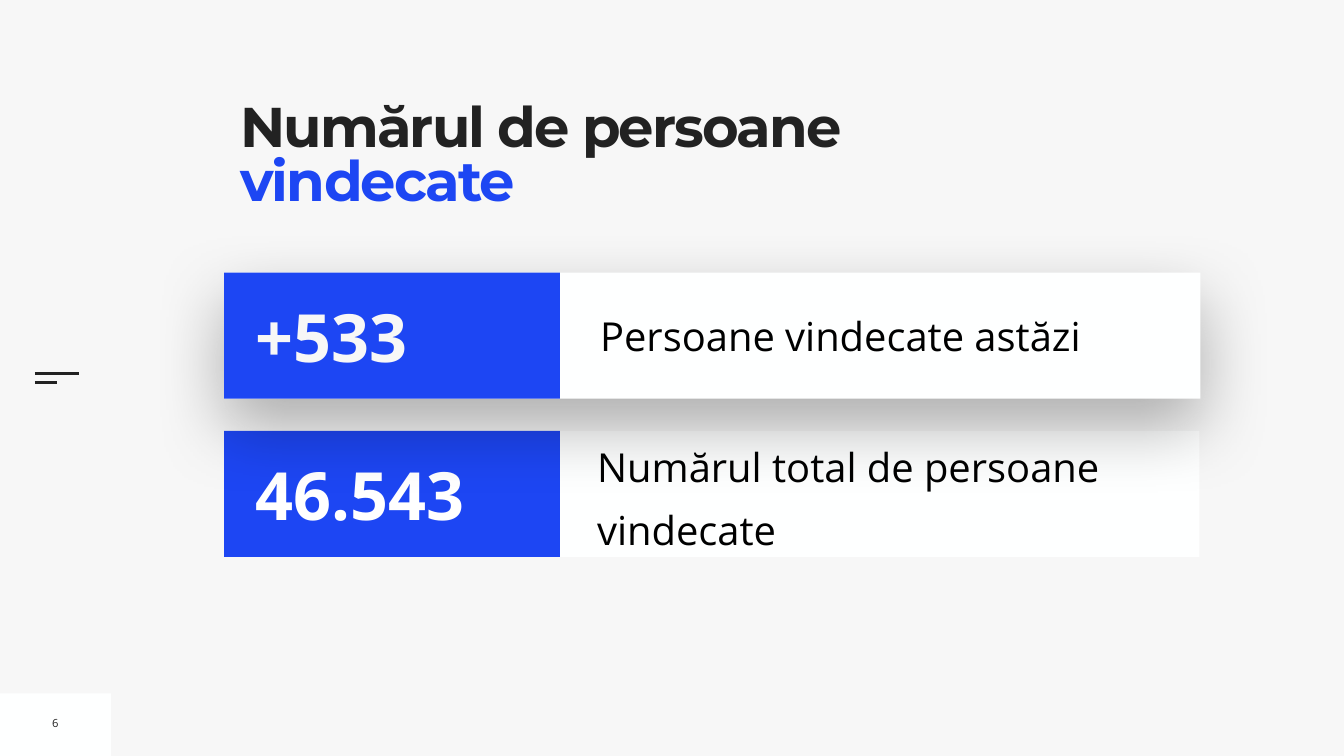
from lxml import etree
from pptx import Presentation
from pptx.dml.color import RGBColor
from pptx.enum.shapes import MSO_CONNECTOR, MSO_SHAPE
from pptx.enum.text import MSO_ANCHOR, PP_ALIGN
from pptx.oxml import parse_xml
from pptx.oxml.ns import nsdecls, qn
from pptx.util import Pt

PX = 9144  # 100 px to the inch
RECT, LINE = MSO_SHAPE.RECTANGLE, MSO_CONNECTOR.STRAIGHT
MIDDLE, TOP = MSO_ANCHOR.MIDDLE, MSO_ANCHOR.TOP
CENTER, LEFT = PP_ALIGN.CENTER, PP_ALIGN.LEFT
WHITE, PALE, BLUE, DARK, BLACK = "FEFFFF", "F7F7F7", "1D46F3", "222222", "000000"
HEAD, BODY = "Montserrat", "Open Sans"


def color(code):
    return RGBColor.from_string(code)


def emu(*px):
    return [n * PX for n in px]


def add_rect(shapes, box, fill):
    rect = shapes.add_shape(RECT, *emu(*box))
    rect.shadow.inherit = False
    rect.fill.solid()
    rect.fill.fore_color.rgb = color(fill)
    rect.line.fill.background()
    return rect


def add_text(shapes, box, runs, size, font, bold=False, inset=10,
             anchor=MIDDLE, align=LEFT, wrap=True):
    """Add one paragraph made of (text, colour) runs."""
    area = shapes.add_textbox(*emu(*box))
    frame = area.text_frame
    frame.word_wrap = wrap
    frame.vertical_anchor = anchor
    frame.margin_left = frame.margin_right = inset * PX
    frame.margin_top = frame.margin_bottom = inset * PX
    para = frame.paragraphs[0]
    para.alignment = align
    para.font.size, para.font.name, para.font.bold = Pt(size), font, bold
    for text, ink in runs:
        run = para.add_run()
        run.text = text
        run.font.color.rgb = color(ink)
    return para


def add_shadow(shape):
    effects = shape._element.spPr.find(qn("a:effectLst"))
    effects.append(parse_xml(
        f'<a:outerShdw {nsdecls("a")} blurRad="{Pt(100)}" dist="{Pt(40)}" '
        'dir="5400000" rotWithShape="0"><a:srgbClr val="000000">'
        '<a:alpha val="30000"/></a:srgbClr></a:outerShdw>'))


def add_frame(slide, left, top):
    """Menu mark at left, top and the page number in the lower corner."""
    shapes = slide.shapes
    add_rect(shapes, (0, 1376, 220, 124), WHITE)
    for drop, width in ((0, 88), (18, 44)):
        y = top + drop
        line = shapes.add_connector(LINE, *emu(left, y, left + width, y))
        line.line.color.rgb = color(DARK)
        line.line.width = Pt(3)
        etree.SubElement(line._element.spPr, qn("a:effectLst"))
    add_text(shapes, (93, 1409, 34, 51), [("6", DARK)], 16, BODY,
             align=CENTER, wrap=False)


def add_title(slide, box):
    runs = [("Numărul de persoane ", DARK), ("vindecate", BLUE)]
    para = add_text(slide.shapes, box, runs, 80, HEAD, True, 0, TOP)
    para.line_spacing = 0.8
    for run in para.runs:
        run.font._element.set("spc", "-270")


def add_row(slide, box, value, ink, label, spot, raised=False):
    """A card with a figure on blue; spot is the label's box within it."""
    left, top, width, height = box
    shapes = slide.shapes.add_group_shape().shapes
    card = add_rect(shapes, box, WHITE)
    if raised:
        add_shadow(card)
    x, y, wide, high = spot
    para = add_text(shapes, (left + x, top + y, wide, high),
                    [(label, BLACK)], 57, BODY, inset=10 if raised else 0)
    if not raised:
        para.line_spacing = 1.3
        para.space_before = Pt(20)
    add_rect(shapes, (left, top, 666, height), BLUE)
    add_text(shapes, (left + 53, top + 35, 603, 180), [(value, ink)],
             95, BODY, True)


def main():
    deck = Presentation()
    deck.slide_width, deck.slide_height = emu(2667, 1500)
    slide = deck.slides.add_slide(deck.slide_layouts[6])
    slide.background.fill.solid()
    slide.background.fill.fore_color.rgb = color(PALE)

    add_frame(slide, 69, 741)
    add_title(slide, (477, 207, 1301, 273))
    # The raised row comes last so that its shadow falls on the other
    add_row(slide, (445, 855, 1935, 250), "46.543", "FFFFFF",
            "Numărul total de persoane vindecate", (740, 1, 1195, 236))
    add_row(slide, (445, 541, 1937, 250), "+533", PALE,
            "Persoane vindecate astăzi", (736, 66, 1176, 116), True)
    deck.save("out.pptx")


if __name__ == "__main__":
    main()
